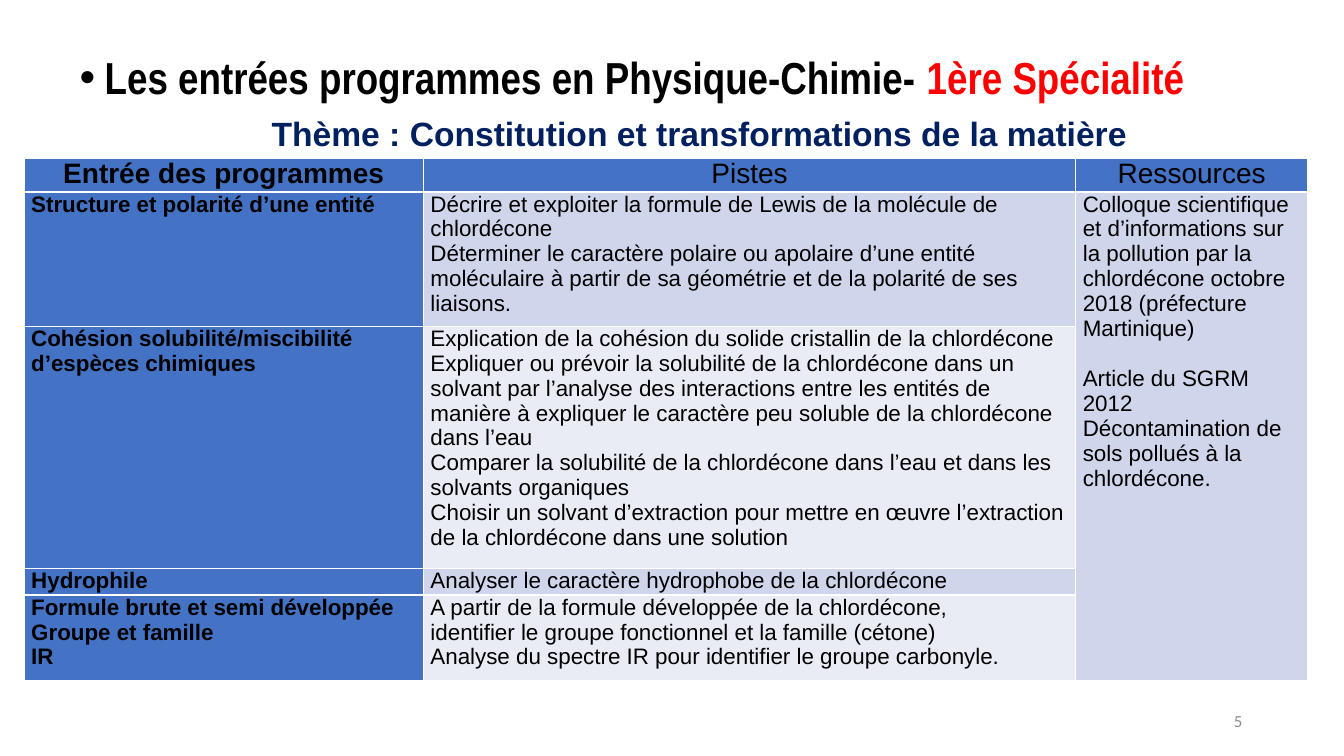
from dataclasses import dataclass

from lxml import etree
from pptx import Presentation
from pptx import util as u
from pptx.dml.color import RGBColor
from pptx.enum import text
from pptx.oxml import ns


@dataclass(frozen=True)
class Theme:
    black: str = "000000"
    red: str = "FF0000"
    navy: str = "002060"
    grey: str = "8C8C8C"
    blue: str = "4472C4"
    bands: tuple = ("CFD5EA", "E9EBF5")
    body_font: str = "Arial"
    title_font: str = "Arial Narrow"
    number_font: str = "Calibri"
    title_size: int = 32
    theme_size: int = 24
    header_size: int = 20
    cell_size: int = 16
    number_size: int = 12


THEME = Theme()
ALIGN = text.PP_ALIGN
COLUMN_WIDTHS = (3.96, 6.47, 2.3)
ROW_HEIGHTS = (0.31, 1.23, 2.22, 0.25, 0.85)
HEADERS = ("Entrée des programmes", "Pistes", "Ressources")
ENTRIES = (
    (
        ("Structure et polarité d’une entité",),
        (
            "Décrire et exploiter la formule de Lewis de la molécule de chlordécone",
            "Déterminer le caractère polaire ou apolaire d’une entité moléculaire "
            "à partir de sa géométrie et de la polarité de ses liaisons.",
        ),
    ),
    (
        ("Cohésion solubilité/miscibilité d’espèces chimiques",),
        (
            "Explication de la cohésion du solide cristallin de la chlordécone",
            "Expliquer ou prévoir la solubilité de la chlordécone dans un solvant "
            "par l’analyse des interactions entre les entités de manière à "
            "expliquer le caractère peu soluble de la chlordécone dans l’eau",
            "Comparer la solubilité de la chlordécone dans l’eau et dans les "
            "solvants organiques",
            "Choisir un solvant d’extraction pour mettre en œuvre l’extraction "
            "de la chlordécone dans une solution",
        ),
    ),
    (("Hydrophile",), ("Analyser le caractère hydrophobe de la chlordécone",)),
    (
        ("Formule brute et semi développée", "Groupe et famille", "IR"),
        (
            "A partir de la formule développée de la chlordécone,",
            "identifier le groupe fonctionnel et la famille (cétone)",
            "Analyse du spectre IR pour identifier le groupe carbonyle.",
        ),
    ),
)
RESOURCES = (
    "Colloque scientifique et d’informations sur la pollution par la "
    "chlordécone octobre 2018 (préfecture Martinique)",
    "Article du SGRM 2012",
    "Décontamination de sols pollués à la chlordécone.",
)


def style_font(font, name, size, color, bold=False):
    font.name = name
    font.size = u.Pt(size)
    font.bold = bold
    font.color.rgb = RGBColor.from_string(color)


def add_box(page, left, top, width, height):
    box = page.shapes.add_textbox(
        u.Inches(left), u.Inches(top), u.Inches(width), u.Inches(height)
    )
    box.text_frame.word_wrap = True
    return box.text_frame


def add_bullet(para, indent):
    properties = para._p.get_or_add_pPr()
    properties.set("marL", str(u.Inches(indent)))
    properties.set("indent", str(-u.Inches(indent)))
    font = etree.SubElement(properties, ns.qn("a:buFont"))
    font.set("typeface", THEME.body_font)
    bullet = etree.SubElement(properties, ns.qn("a:buChar"))
    bullet.set("char", "•")


def add_heading(page):
    frame = add_box(page, 0.69, 0.5, 12.49, 0.64)
    title, subject = frame.paragraphs[0], frame.add_paragraph()
    for para in (title, subject):
        para.line_spacing = 0.9
        para.space_before = u.Pt(10)
    add_bullet(title, 0.25)
    for words, color in (
        ("Les entrées programmes en Physique-Chimie- ", THEME.black),
        ("1ère Spécialité", THEME.red),
    ):
        span = title.add_run()
        span.text = words
        style_font(span.font, THEME.title_font, THEME.title_size, color, True)
    subject.text = "Thème : Constitution et transformations de la matière"
    subject.alignment = ALIGN.CENTER
    style_font(subject.font, THEME.body_font, THEME.theme_size, THEME.navy, True)


def fill_cell(cell, lines, fill, size=THEME.cell_size, bold=False, align=ALIGN.LEFT):
    cell.fill.solid()
    cell.fill.fore_color.rgb = RGBColor.from_string(fill)
    cell.margin_left = cell.margin_right = u.Inches(0.07)
    cell.margin_top = cell.margin_bottom = 0
    cell.text = "\n".join(lines)
    for para in cell.text_frame.paragraphs:
        para.alignment = align
        style_font(para.font, THEME.body_font, size, THEME.black, bold)


def add_programme_table(page):
    table = page.shapes.add_table(
        len(ROW_HEIGHTS), len(COLUMN_WIDTHS), u.Inches(0.24), u.Inches(1.57),
        u.Inches(sum(COLUMN_WIDTHS)), u.Inches(sum(ROW_HEIGHTS)),
    ).table
    table.first_col = True
    for column, width in zip(table.columns, COLUMN_WIDTHS):
        column.width = u.Inches(width)
    for row, height in zip(table.rows, ROW_HEIGHTS):
        row.height = u.Inches(height)
    for index, header in enumerate(HEADERS):
        fill_cell(table.cell(0, index), (header,), THEME.blue,
                  THEME.header_size, index == 0, ALIGN.CENTER)
    for index, (entry, leads) in enumerate(ENTRIES):
        fill_cell(table.cell(index + 1, 0), entry, THEME.blue, bold=True)
        fill_cell(table.cell(index + 1, 1), leads, THEME.bands[index % 2])
    resources = table.cell(1, 2)
    resources.merge(table.cell(len(ENTRIES), 2))
    fill_cell(resources, RESOURCES, THEME.bands[0])
    resources.text_frame.paragraphs[1].space_before = u.Pt(18)


def add_page_number(page, number):
    frame = add_box(page, 9.42, 6.95, 3, 0.4)
    frame.vertical_anchor = text.MSO_ANCHOR.MIDDLE
    para = frame.paragraphs[0]
    para.text = str(number)
    para.alignment = ALIGN.RIGHT
    style_font(para.font, THEME.number_font, THEME.number_size, THEME.grey)


def main():
    deck = Presentation()
    deck.slide_width = u.Inches(13.33)
    deck.slide_height = u.Inches(7.5)
    page = deck.slides.add_slide(deck.slide_layouts[6])
    add_heading(page)
    add_programme_table(page)
    add_page_number(page, 5)
    deck.save("out.pptx")


if __name__ == "__main__":
    main()
